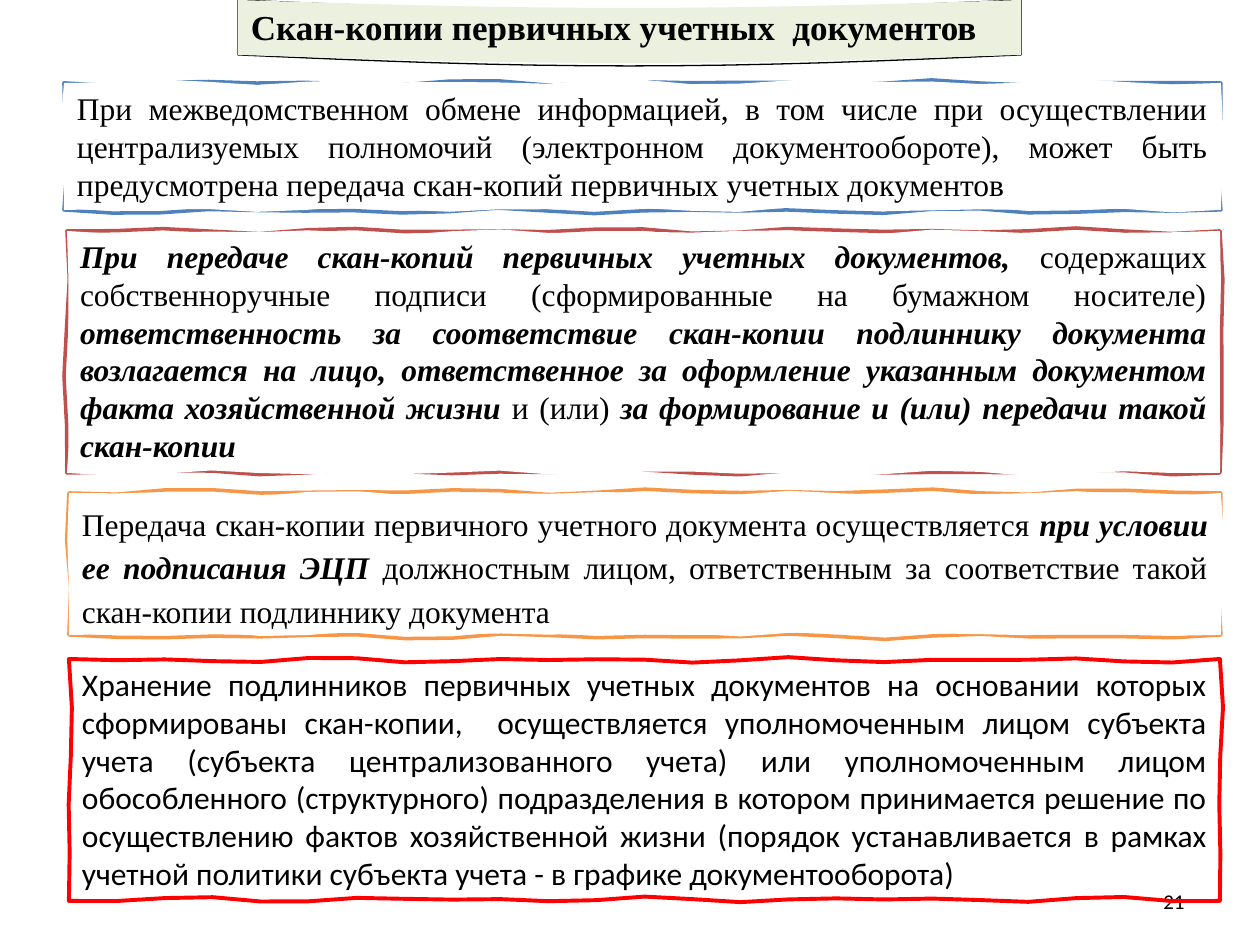
from copy import deepcopy
from math import pi, sin
from pptx import Presentation
from pptx import util as u
from pptx.dml.color import RGBColor
from pptx.enum import text

PX = 914400 / 126  # EMU in one px
THEME = {
    "serif": "Times New Roman", "sans": "Calibri",
    "ink": "000000", "paper": "FFFFFF", "banner": "EBF1DE",
    "blue": "4F81BD", "red": "C0504D", "orange": "F79646", "alert": "FF0000",
    "title": 20, "body": 18, "number": 12,
}
INSET = (13, 6)
STEP = 48


def outline(frame, wobble, bow, phase):
    """Points clockwise round a frame whose sides waver or bow downwards."""
    left, top, width, height = frame
    right, bottom = left + width, top + height
    corners = [(left, top), (right, top), (right, bottom), (left, bottom), (left, top)]
    points = []
    for side, ((x1, y1), (x2, y2)) in enumerate(zip(corners, corners[1:])):
        length = abs(x2 - x1) + abs(y2 - y1)
        count = max(1, round(length / STEP))
        for index in range(count):
            t = index / count
            run = t * length
            start = phase + 2 * side
            shift = wobble * (sin(run / 24) + sin(run / 37 + start) - sin(start)) / 2
            x, y = x1 + t * (x2 - x1), y1 + t * (y2 - y1)
            if side % 2:
                x += shift
            else:
                y += shift + bow * sin(pi * t)
            points.append((round(x * PX), round(y * PX)))
    return points


def write(frame, runs, font, size, **formats):
    """Fill a text frame with one paragraph of (text, bold, italic) runs."""
    paragraph = frame.paragraphs[0]
    for name, value in formats.items():
        setattr(paragraph, name, value)
    for words, bold, italic in runs:
        run = paragraph.add_run()
        run.text = words
        values = {"name": font, "size": u.Pt(size), "bold": bold, "italic": italic}
        for name, value in values.items():
            setattr(run.font, name, value)
        run.font.color.rgb = RGBColor.from_string(THEME["ink"])


presentation = Presentation()
presentation.slide_width, presentation.slide_height = u.Inches(10), u.Inches(7.5)
slide = presentation.slides.add_slide(presentation.slide_layouts[6])

# Slide number
number = slide.shapes.add_textbox(*(round(v * PX) for v in (903, 876, 294, 50))).text_frame
number.word_wrap = True
number.vertical_anchor = text.MSO_ANCHOR.MIDDLE
write(number, [("21", False, False)], THEME["sans"], THEME["number"],
      alignment=text.PP_ALIGN.RIGHT)

# Panels from back to front
justified = {"alignment": text.PP_ALIGN.JUSTIFY}
panels = [
    {"frame": (64, 83, 1157, 127), "line": "blue", "fill": "paper", "format": justified,
     "runs": [("При межведомственном обмене информацией, в том числе при осуществлении "
               "централизуемых полномочий (электронном документообороте), может быть "
               "предусмотрена передача скан-копий первичных учетных документов", False, False)]},
    {"frame": (69, 493, 1152, 142), "line": "orange", "fill": "paper",
     "format": {**justified, "line_spacing": 1.15, "space_before": u.Pt(11),
                "space_after": u.Pt(0.1)},
     "runs": [("Передача скан-копии первичного учетного документа осуществляется ", False, False),
              ("при условии ее подписания ЭЦП ", True, True),
              ("должностным лицом, ответственным за соответствие такой скан-копии "
               "подлиннику документа", False, False)]},
    {"frame": (238, 0, 783, 55), "line": "ink", "fill": "banner", "format": {},
     "wobble": 0, "bows": (11, 8), "width": 0.75, "size": "title",
     "runs": [("Скан-копии первичных учетных  документов", True, False)]},
    {"frame": (67, 231, 1153, 242), "line": "red", "fill": "paper", "format": justified,
     "runs": [("При передаче скан-копий первичных учетных документов,", True, True),
              (" содержащих собственноручные подписи (сформированные на бумажном носителе)",
               False, False),
              (" ответственность за соответствие скан-копии подлиннику документа возлагается "
               "на лицо, ответственное за оформление указанным документом факта "
               "хозяйственной жизни ", True, True),
              ("и (или) ", False, False),
              ("за формирование и (или) передачи такой скан-копии", True, True)]},
    {"frame": (69, 659, 1151, 242), "line": "alert", "fill": None, "format": justified,
     "width": 2.25, "font": "sans",
     "runs": [("Хранение подлинников первичных учетных документов на основании которых "
               "сформированы скан-копии,  осуществляется уполномоченным лицом субъекта учета "
               "(субъекта централизованного учета) или уполномоченным лицом обособленного "
               "(структурного) подразделения в котором принимается решение по осуществлению "
               "фактов хозяйственной жизни (порядок устанавливается в рамках учетной политики "
               "субъекта учета - в графике документооборота)", False, False)]},
]

for order, panel in enumerate(panels):
    frame = panel["frame"]
    wobble = panel.get("wobble", 3)
    stroke_bow, fill_bow = panel.get("bows", (0, 0))
    contours = [outline(frame, wobble, stroke_bow, order)]
    if panel["fill"]:
        contours.append(outline(frame, wobble, fill_bow, order + 2.5))

    builder = slide.shapes.build_freeform(*contours[0][0], scale=1.0)
    builder.add_line_segments(contours[0][1:], close=True)
    for contour in contours[1:]:
        builder.move_to(*contour[0])
        builder.add_line_segments(contour[1:], close=True)
    shape = builder.convert_to_shape()
    shape.shadow.inherit = False
    shape.line.color.rgb = RGBColor.from_string(THEME[panel["line"]])
    shape.line.width = u.Pt(panel.get("width", 2))

    # The first contour is only stroked, the second only filled
    if panel["fill"]:
        shape.fill.solid()
        shape.fill.fore_color.rgb = RGBColor.from_string(THEME[panel["fill"]])
        stroke = shape.element.xpath(".//a:path")[0]
        filling = deepcopy(stroke)
        stroke.addnext(filling)
        stroke.set("fill", "none")
        filling.set("stroke", "0")
        split = len(contours[0]) + 1
        for surplus in list(stroke)[split:]:
            stroke.remove(surplus)
        for surplus in list(filling)[:split]:
            filling.remove(surplus)
    else:
        shape.fill.background()

    # Text insets are measured from the straight frame
    body = shape.text_frame
    settings = {
        "word_wrap": True, "vertical_anchor": text.MSO_ANCHOR.TOP,
        "margin_left": round((frame[0] + INSET[0]) * PX) - shape.left,
        "margin_top": round((frame[1] + INSET[1]) * PX) - shape.top,
        "margin_right": shape.left + shape.width
        - round((frame[0] + frame[2] - INSET[0]) * PX),
        "margin_bottom": 0,
    }
    for name, value in settings.items():
        setattr(body, name, value)
    write(body, panel["runs"], THEME[panel.get("font", "serif")],
          THEME[panel.get("size", "body")],
          **{"alignment": text.PP_ALIGN.LEFT, **panel["format"]})

presentation.save("out.pptx")
